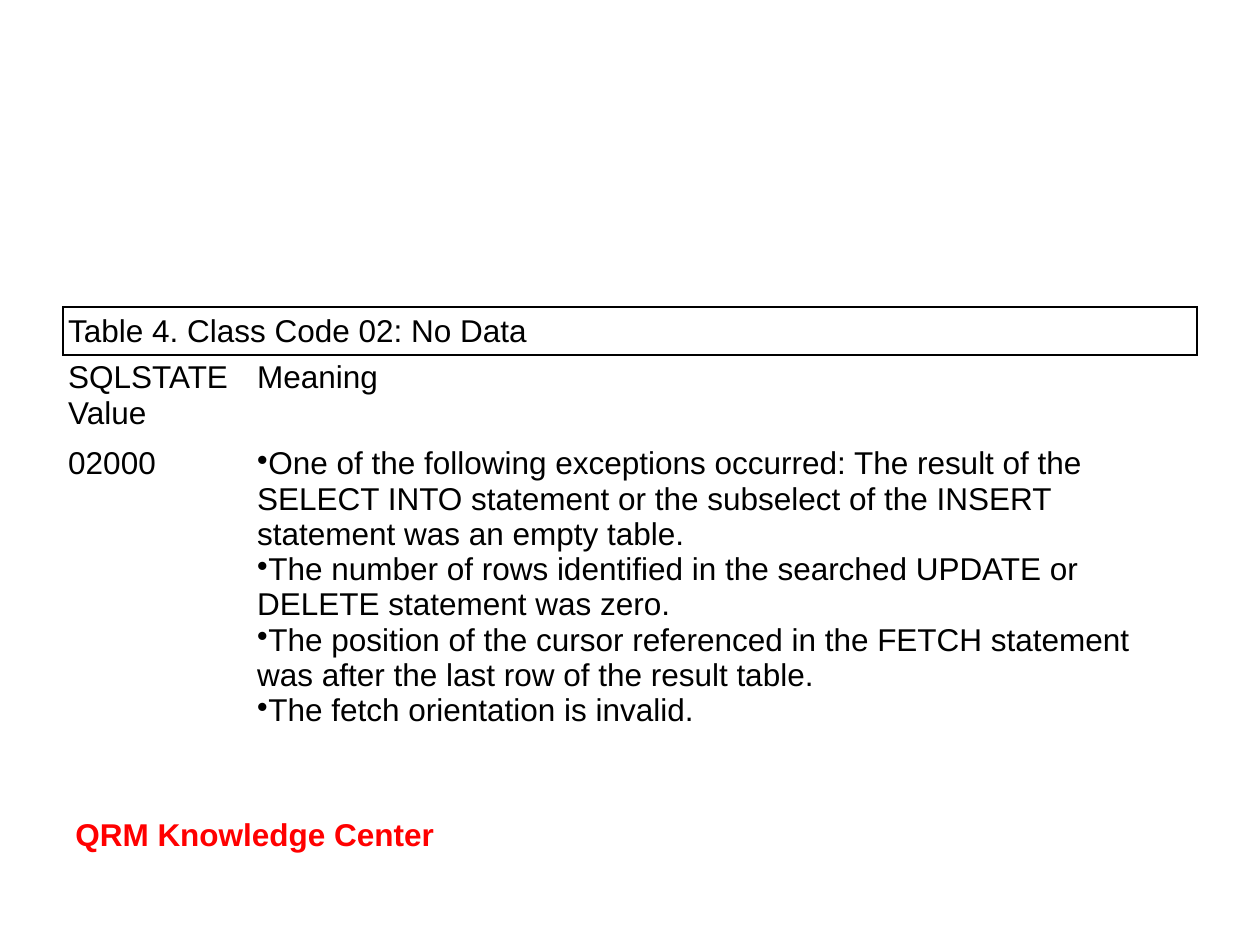
from lxml import etree
from pptx import Presentation
from pptx.dml.color import RGBColor
from pptx.enum import text as t
from pptx.oxml import ns
from pptx.util import Pt

HUES = {"ink": "000000", "accent": "FF0000"}
PLAIN = "{2D5ABB26-0587-4C30-8999-92F81FD0307C}"  # no style, no grid


class Deck:
    font = "Arial"
    size = 18
    inset = 3

    def __init__(self, wide, high):
        self.prs = Presentation()
        self.prs.slide_width, self.prs.slide_height = Pt(wide), Pt(high)
        self.slide = self.prs.slides.add_slide(self.prs.slide_layouts[6])

    def put(self, frame, lines, hue="ink", bold=False, bullet=False):
        """Fill a text frame with one paragraph per line."""
        frame.word_wrap = True
        for i, line in enumerate(lines):
            para = frame.add_paragraph() if i else frame.paragraphs[0]
            para.text = line
            font = para.font
            font.name, font.size, font.bold = self.font, Pt(self.size), bold
            font.color.rgb = RGBColor.from_string(HUES[hue])
            if bullet:
                props = para._p.get_or_add_pPr()
                mark = etree.Element(ns.qn("a:buChar"), char="•")
                props.insert(0, mark)

    def label(self, x, y, w, h, line, hue):
        box = self.slide.shapes.add_textbox(Pt(x), Pt(y), Pt(w), Pt(h))
        box.text_frame.vertical_anchor = t.MSO_ANCHOR.BOTTOM
        self.put(box.text_frame, [line], hue, bold=True)

    def border(self, cell, sides):
        props = cell._tc.get_or_add_tcPr()
        for side in sides:
            line = etree.SubElement(props, ns.qn(f"a:ln{side}"), w=str(Pt(1)))
            fill = etree.SubElement(line, ns.qn("a:solidFill"))
            etree.SubElement(fill, ns.qn("a:srgbClr"), val=HUES["ink"])

    def table(self, x, y, cols, rows, cells):
        """Build a table whose first row is one merged, outlined caption."""
        grid = self.slide.shapes.add_table(
            len(rows), len(cols), Pt(x), Pt(y), Pt(sum(cols)), Pt(sum(rows))).table
        grid._tbl.tblPr.find(ns.qn("a:tableStyleId")).text = PLAIN
        grid.first_row = grid.horz_banding = False
        for col, wide in zip(grid.columns, cols):
            col.width = Pt(wide)
        for row, high in zip(grid.rows, rows):
            row.height = Pt(high)
        head, last = grid.cell(0, 0), grid.cell(0, len(cols) - 1)
        head.merge(last)
        self.border(head, "LRTB")
        self.border(last, "RT")
        for r, row in enumerate(cells):
            for c, lines in enumerate(row):
                cell = grid.cell(r, c)
                cell.margin_left = cell.margin_right = Pt(self.inset)
                cell.margin_top = cell.margin_bottom = Pt(self.inset)
                self.put(cell.text_frame, lines, bullet=len(lines) > 1)
        head.vertical_anchor = t.MSO_ANCHOR.MIDDLE
        for cell in grid.iter_cells():
            cell.fill.background()


def main():
    deck = Deck(720, 540)
    deck.table(36, 175.5, [108, 540], [27.4, 49.2, 157.4], [
        [["Table 4. Class Code 02: No Data"]],
        [["SQLSTATE Value"], ["Meaning"]],
        [["02000"], [
            "One of the following exceptions occurred: The result of the SELECT INTO "
            "statement or the subselect of the INSERT statement was an empty table.",
            "The number of rows identified in the searched UPDATE or DELETE "
            "statement was zero.",
            "The position of the cursor referenced in the FETCH statement was after "
            "the last row of the result table.",
            "The fetch orientation is invalid.",
        ]],
    ])
    deck.label(36, 440, 504, 51, "QRM Knowledge Center", "accent")
    deck.prs.save("out.pptx")


if __name__ == "__main__":
    main()
